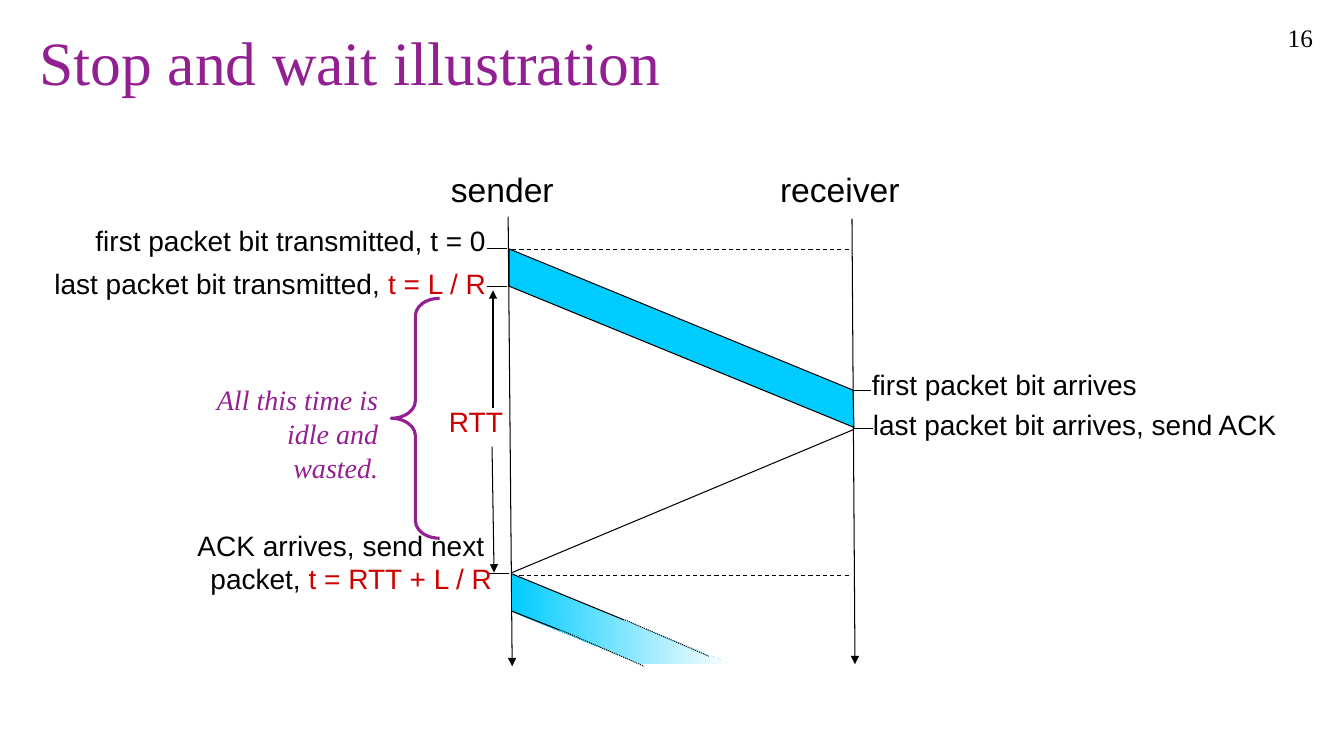
from pptx import Presentation
from pptx.dml.color import RGBColor
from pptx.enum.dml import MSO_LINE
from pptx.enum.shapes import MSO_CONNECTOR, MSO_SHAPE
from pptx.enum.text import MSO_ANCHOR, PP_ALIGN
from pptx.oxml.ns import qn
from pptx.util import Pt
from lxml.etree import SubElement

PX = 9144
BLACK = RGBColor(0, 0, 0)
WHITE = RGBColor(255, 255, 255)
PURPLE = RGBColor(0x93, 0x20, 0x92)
RED = RGBColor(0xCC, 0, 0)
CYAN = RGBColor(0, 0xCC, 0xFF)
SERIF = "Times New Roman"
LEFT, RIGHT = PP_ALIGN.LEFT, PP_ALIGN.RIGHT
DASH, DOT = MSO_LINE.DASH, MSO_LINE.ROUND_DOT

TITLE = ((29, 17, 1273, 97), [["Stop and wait illustration"]])
LABELS = [
    ((1246, 17, 66, 40), [["16"]], dict(size=18, font=SERIF)),
    ((-3, 217, 495, 54), [["first packet bit transmitted, t = 0"]], dict(fill=WHITE)),
    ((423, 163, 136, 54), [["sender"]], dict(size=24, fill=WHITE)),
    ((757, 163, 145, 54), [["receiver"]], dict(size=24, fill=WHITE)),
    ((383, 396, 130, 52), [[("RTT", RED), (" ", BLACK, 11)]], {}),
    ((-39, 259, 531, 54), [["last packet bit transmitted, ", ("t = L / R", RED)]], {}),
    ((855, 360, 371, 54), [["first packet bit arrives"]], dict(align=LEFT)),
    ((856, 399, 477, 87), [["last packet bit arrives, send ACK"]], dict(align=LEFT)),
    ((87, 519, 411, 97),
     [["ACK arrives, send next "], ["packet, ", ("t = RTT + L / R", RED)]], {}),
    ((195, 375, 190, 77), [["All this time is idle and wasted."]],
     dict(font=SERIF, color=PURPLE, italic=True)),
]
ARROWS = [
    (504, 215, 508, 661), (845, 217, 848, 659),
    (488, 443, 490, 568), (489, 405, 489, 288),
]
DASHES = [(508, 248, 843, 248), (508, 571, 844, 571)]
LINES = [
    (506, 248, 847, 390), (508, 568, 847, 426),
    (503, 247, 483, 247), (503, 284, 483, 284), (505, 569, 485, 569),
    (864, 387, 843, 387), (847, 425, 866, 425),
]
PACKET = [(505, 247), (846, 387), (847, 424), (505, 284)]
NEXT = [(508, 570), (725, 659), (637, 659), (508, 607)]
EDGES = [(507, 569, 619, 615), (507, 606, 555, 625)]
DOTS = [(620, 615, 703, 651), (556, 625, 639, 661)]
BRACE = (388, 296, 48, 238)


def emu(nums):
    return [n * PX for n in nums]


def write(shape, paras, size=20, font="Arial", color=BLACK, align=RIGHT,
          italic=False, fill=None, anchor=MSO_ANCHOR.TOP, space=1.0):
    frame = shape.text_frame
    frame.word_wrap = True
    frame.vertical_anchor = anchor
    if fill is not None:
        shape.fill.solid()
        shape.fill.fore_color.rgb = fill
    for i, runs in enumerate(paras):
        para = frame.add_paragraph() if i else frame.paragraphs[0]
        para.alignment = align
        para.line_spacing = space
        for part in runs:
            text, tint, pts = ((part,) if isinstance(part, str) else part) + (None,) * (
                2 if isinstance(part, str) else 3 - len(part))
            run = para.add_run()
            run.text = text
            run.font.name = font
            run.font.size = Pt(pts or size)
            run.font.italic = italic
            run.font.color.rgb = color if tint is None else tint


def draw(shapes, ends, dash=None, arrow=False):
    line = shapes.add_connector(MSO_CONNECTOR.STRAIGHT, *emu(ends))
    line.line.color.rgb = BLACK
    line.line.width = Pt(0.75)
    if dash:
        line.line.dash_style = dash
    props = line._element.spPr
    if arrow:
        SubElement(props.find(qn("a:ln")), qn("a:tailEnd"), type="triangle")
    SubElement(props, qn("a:effectLst"))


def band(shapes, points):
    pen = shapes.build_freeform(*points[0], scale=PX)
    pen.add_line_segments(points[1:], close=True)
    shape = pen.convert_to_shape()
    shape.shadow.inherit = False
    return shape


def main():
    """Build the stop and wait timing slide."""
    deck = Presentation()
    deck.slide_width, deck.slide_height = emu((1333, 750))
    slide = deck.slides.add_slide(deck.slide_layouts[5])
    shapes = slide.shapes

    head = shapes.title
    head.left, head.top, head.width, head.height = emu(TITLE[0])
    write(head, TITLE[1], size=44, font=SERIF, color=PURPLE, align=LEFT,
          anchor=MSO_ANCHOR.MIDDLE, space=0.9)
    for box, paras, style in LABELS:
        write(shapes.add_textbox(*emu(box)), paras, **style)

    for ends in ARROWS:
        draw(shapes, ends, arrow=True)
    for ends in DASHES:
        draw(shapes, ends, dash=DASH)
    for ends in LINES:
        draw(shapes, ends)

    full = band(shapes, PACKET)
    full.fill.solid()
    full.fill.fore_color.rgb = CYAN
    full.line.color.rgb = BLACK
    full.line.width = Pt(0.75)

    fade = band(shapes, NEXT)
    fade.fill.gradient()
    fade.fill.gradient_angle = 0
    for stop, color in zip(fade.fill.gradient_stops, (CYAN, WHITE)):
        stop.color.rgb = color
    fade.line.fill.background()
    for ends in EDGES:
        draw(shapes, ends)
    for ends in DOTS:
        draw(shapes, ends, dash=DOT)

    brace = shapes.add_shape(MSO_SHAPE.LEFT_BRACE, *emu(BRACE))
    brace.shadow.inherit = False
    brace.adjustments[0] = 0.36
    brace.fill.background()
    brace.line.color.rgb = PURPLE
    brace.line.width = Pt(2.25)

    deck.save("out.pptx")


if __name__ == "__main__":
    main()
